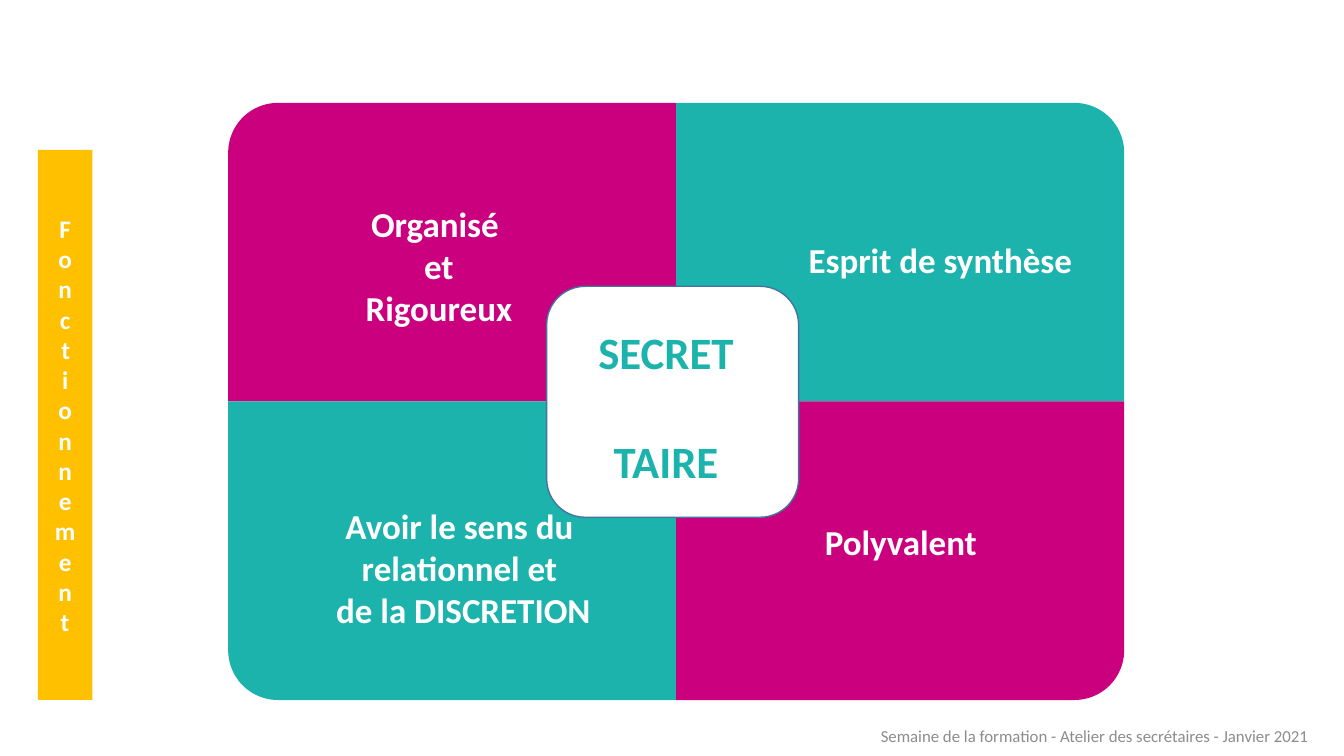
from math import cos, pi, sin

from pptx import Presentation
from pptx.dml.color import RGBColor
from pptx.enum.shapes import MSO_SHAPE
from pptx.enum.text import MSO_ANCHOR, PP_ALIGN
from pptx.util import Pt

COLORS = {
    "pink": "CB007E",
    "teal": "1CB3AC",
    "amber": "FFC000",
    "white": "FFFFFF",
    "hub_line": "43739E",
    "footer": "8C8C8C",
}
FONT = "Calibri"
CORNER_RADIUS = 35.5
ARC_STEPS = 24


def color(name):
    return RGBColor.from_string(COLORS[name])


def write(frame, lines, size, ink, bold=True, align=PP_ALIGN.CENTER, gap=0):
    for index, line in enumerate(lines):
        paragraph = frame.paragraphs[0] if index == 0 else frame.add_paragraph()
        paragraph.alignment = align
        if index and gap:
            paragraph.space_before = Pt(gap)
        run = paragraph.add_run()
        run.text = line
        run.font.name = FONT
        run.font.size = Pt(size)
        run.font.bold = bold
        run.font.color.rgb = color(ink)


def add_label(slide, box, lines, size, ink, wrap=True, **style):
    label = slide.shapes.add_textbox(*map(Pt, box))
    label.text_frame.word_wrap = wrap
    write(label.text_frame, lines, size, ink, **style)
    return label


def add_block(slide, preset, box, fill):
    block = slide.shapes.add_shape(preset, *map(Pt, box))
    block.shadow.inherit = False
    block.fill.solid()
    block.fill.fore_color.rgb = color(fill)
    block.line.fill.background()
    return block


def add_quadrant(slide, center, half, side, fill):
    (cx, cy), (half_width, half_height), (sx, sy) = center, half, side
    arc_x, arc_y = half_width - CORNER_RADIUS, half_height - CORNER_RADIUS
    angles = [pi / 2 * step / ARC_STEPS for step in range(ARC_STEPS + 1)]
    outline = [(half_width, 0)]
    outline += [(arc_x + CORNER_RADIUS * cos(a), arc_y + CORNER_RADIUS * sin(a)) for a in angles]
    outline += [(0, half_height)]
    builder = slide.shapes.build_freeform(Pt(cx), Pt(cy))
    builder.add_line_segments([(Pt(cx + sx * x), Pt(cy + sy * y)) for x, y in outline])
    quadrant = builder.convert_to_shape()
    quadrant.shadow.inherit = False
    quadrant.fill.solid()
    quadrant.fill.fore_color.rgb = color(fill)
    quadrant.line.fill.background()


def add_matrix(slide, box):
    left, top, width, height = box
    half = width / 2, height / 2
    center = left + half[0], top + half[1]
    for sx in (-1, 1):
        for sy in (-1, 1):
            add_quadrant(slide, center, half, (sx, sy), "pink" if sx == sy else "teal")

    qualities = [
        ((407.5, 93, 210, 37.5), ["Esprit de synthèse"], False, PP_ALIGN.LEFT),
        ((69, 283, 198, 98), ["Avoir le sens du ", "relationnel et ", "de la DISCRETION"],
         False, PP_ALIGN.CENTER),
        ((5, 67.5, 291, 98), ["Organisé ", "et", "Rigoureux"], True, PP_ALIGN.CENTER),
        ((418, 295, 125, 37.5), ["Polyvalent"], False, PP_ALIGN.CENTER),
    ]
    for (x, y, w, h), lines, wrap, align in qualities:
        add_label(slide, (left + x, top + y, w, h), lines, 25, "white", wrap, align=align)


def add_hub(slide, box):
    left, top, width, height = box
    hub = add_block(slide, MSO_SHAPE.ROUNDED_RECTANGLE, box, "white")
    hub.line.color.rgb = color("hub_line")
    hub.line.width = Pt(1)
    add_label(slide, (left, top + 24, width - 9.5, height - 41),
              ["SECRET", "TAIRE"], 32, "teal", gap=39)


def add_side_banner(slide, box):
    banner = add_block(slide, MSO_SHAPE.RECTANGLE, box, "amber")
    frame = banner.text_frame
    frame.vertical_anchor = MSO_ANCHOR.MIDDLE
    frame._txBody.bodyPr.set("vert", "wordArtVert")
    write(frame, ["Fonctionnement"], 18, "white")


def add_footer(slide, box):
    footer = add_label(slide, box,
                       ["Semaine de la formation - Atelier des secrétaires - Janvier 2021"],
                       12, "footer", bold=False)
    footer.text_frame.vertical_anchor = MSO_ANCHOR.MIDDLE


def main():
    presentation = Presentation()
    presentation.slide_width, presentation.slide_height = Pt(960), Pt(540)
    slide = presentation.slides.add_slide(presentation.slide_layouts[6])
    add_footer(slide, (604, 511, 356, 29))
    add_matrix(slide, (163, 73.5, 640, 426.5))
    add_side_banner(slide, (27, 107, 39, 393))
    add_hub(slide, (390.5, 204.5, 180, 165))
    presentation.save("out.pptx")


if __name__ == "__main__":
    main()
